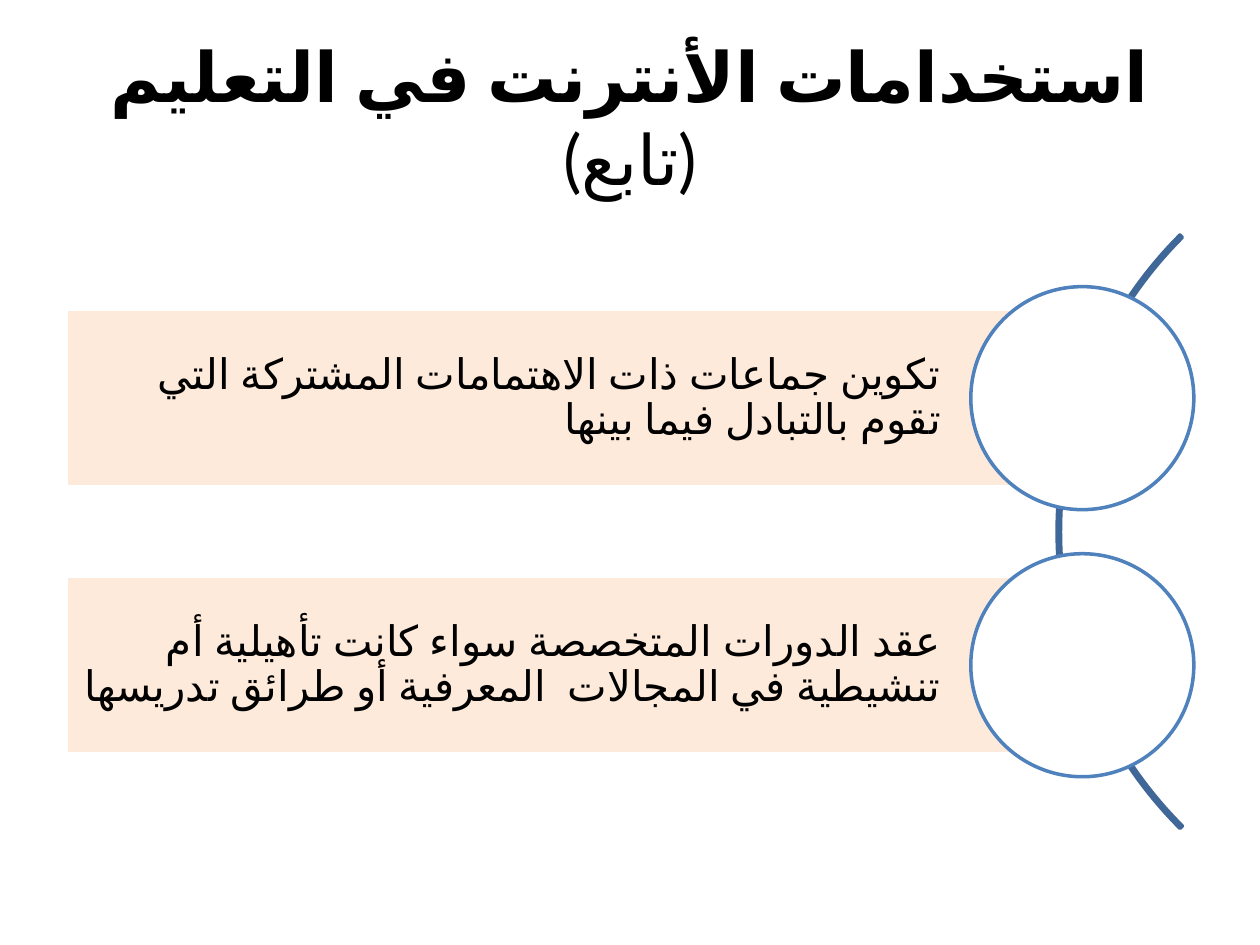
from pptx import Presentation
from pptx.dml.color import RGBColor
from pptx.enum.lang import MSO_LANGUAGE_ID as Language
from pptx.enum.shapes import MSO_SHAPE as Shape
from pptx.enum.text import MSO_ANCHOR as Anchor, PP_ALIGN as Align
from pptx.oxml.ns import qn
from pptx.util import Inches, Pt

TITLE = ("استخدامات الأنترنت في التعليم", "(تابع)")
USES = [
    "تكوين جماعات ذات الاهتمامات المشتركة التي تقوم بالتبادل فيما بينها",
    "عقد الدورات المتخصصة سواء كانت تأهيلية أم تنشيطية في المجالات  المعرفية أو طرائق تدريسها",
]

FONT = "Lato"
BLACK = RGBColor(0x00, 0x00, 0x00)
WHITE = RGBColor(0xFF, 0xFF, 0xFF)
PEACH = RGBColor(0xFD, 0xEA, 0xDA)
BLUE = RGBColor(0x4F, 0x81, 0xBD)
DARK_BLUE = RGBColor(0x3F, 0x67, 0x97)

BAR_LEFT, BAR_WIDTH, BAR_HEIGHT = 0.53, 8.06, 1.41
CIRCLE = 1.77
FIRST_CENTER, ROW_STEP = 3.16, 2.12
ARC_LEFT, ARC_TOP, ARC_SIZE = 8.39, 0.89, 6.66


def add_outlined(page, kind, left, top, width, height, fill, line):
    shape = page.shapes.add_shape(
        kind, Inches(left), Inches(top), Inches(width), Inches(height))
    shape.shadow.inherit = False
    if fill is None:
        shape.fill.background()
    else:
        shape.fill.solid()
        shape.fill.fore_color.rgb = fill
    shape.line.color.rgb = line
    shape.line.width = Pt(2)
    return shape


def format_arabic(para, size, align):
    """Right-to-left paragraph with one font for Latin and Arabic script."""
    para.alignment = align
    para._p.get_or_add_pPr().set("rtl", "1")
    for span in para.runs:
        span.font.name = FONT
        span.font.size = Pt(size)
        span.font.color.rgb = BLACK
        span.font.language_id = Language.ARABIC
        script_font = span.font._element.makeelement(qn("a:cs"), {"typeface": FONT})
        span.font._element.find(qn("a:latin")).addnext(script_font)


def add_title(page):
    title = page.shapes.title
    title.left, title.top = Inches(0.5), Inches(0.3)
    title.width, title.height = Inches(9), Inches(1.25)
    frame = title.text_frame
    frame.vertical_anchor = Anchor.MIDDLE
    para = frame.paragraphs[0]
    para.text = "\v".join(TITLE)
    format_arabic(para, 39.6, Align.CENTER)
    for span, bold in zip(para.runs, (True, False)):
        span.font.bold = bold


def add_use(page, text, center):
    bar = add_outlined(page, Shape.RECTANGLE, BAR_LEFT, center - BAR_HEIGHT / 2,
                       BAR_WIDTH, BAR_HEIGHT, PEACH, WHITE)
    frame = bar.text_frame
    frame.word_wrap = True
    frame.vertical_anchor = Anchor.MIDDLE
    frame.margin_left = frame.margin_top = frame.margin_bottom = Inches(0.07)
    frame.margin_right = Inches(1.12)
    para = frame.paragraphs[0]
    para.text = text
    para.line_spacing = 0.9
    format_arabic(para, 24, Align.RIGHT)
    # Each circle is centred on the right end of its bar.
    add_outlined(page, Shape.OVAL, BAR_LEFT + BAR_WIDTH - CIRCLE / 2,
                 center - CIRCLE / 2, CIRCLE, CIRCLE, WHITE, BLUE)


def main():
    deck = Presentation()
    deck.slide_width, deck.slide_height = Inches(10), Inches(7.5)
    page = deck.slides.add_slide(deck.slide_layouts[5])
    add_title(page)

    arc = add_outlined(page, Shape.BLOCK_ARC, ARC_LEFT, ARC_TOP,
                       ARC_SIZE, ARC_SIZE, None, DARK_BLUE)
    # Start and end angles (135 and 225 degrees), then band thickness.
    for index, value in enumerate((81, 135, 0.004)):
        arc.adjustments[index] = value

    for row, text in enumerate(USES):
        add_use(page, text, FIRST_CENTER + row * ROW_STEP)
    deck.save("out.pptx")


if __name__ == "__main__":
    main()
